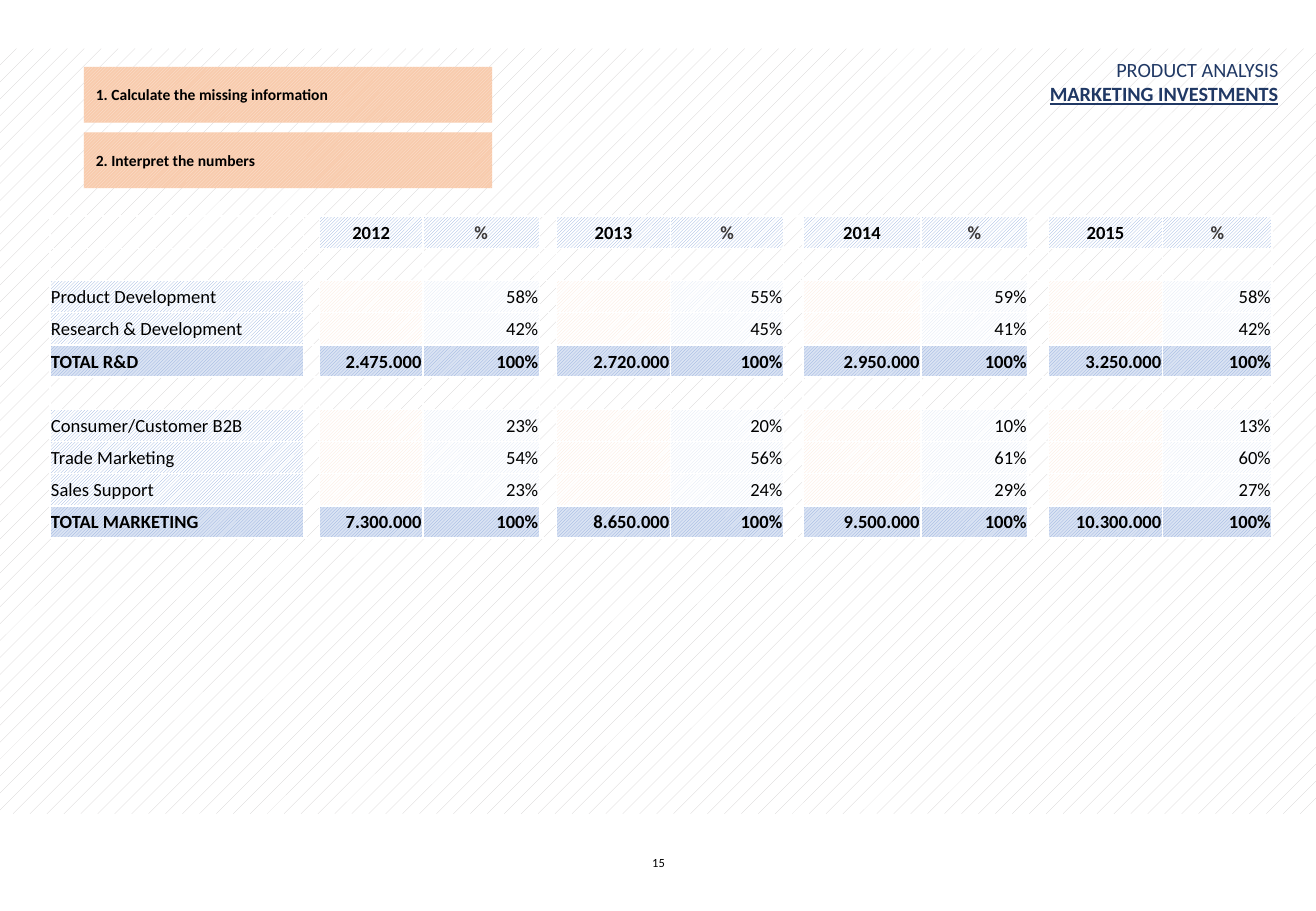
import pptx
import pptx.util
import pptx.dml.color
import pptx.enum.dml
import pptx.enum.shapes
import pptx.enum.text
import pptx.oxml
import pptx.oxml.ns
from dataclasses import dataclass

PX = 4572  # 200 px to the inch
ALIGN = pptx.enum.text.PP_ALIGN
MIDDLE = pptx.enum.text.MSO_ANCHOR.MIDDLE
PATTERN = pptx.enum.dml.MSO_PATTERN
LIGHT = PATTERN.LIGHT_UPWARD_DIAGONAL
DARK = PATTERN.DARK_UPWARD_DIAGONAL


@dataclass(frozen=True)
class Theme:
    font: str = "Calibri"
    ink: str = "000000"
    grey: str = "3B3838"
    navy: str = "203864"
    white: str = "FFFFFF"
    title: float = 12
    body: float = 11
    task: float = 9.2
    page: float = 7.4
    # Pattern, foreground, background
    back: tuple = (PATTERN.PERCENT_5, "D0CECE", "FFFFFF")
    box: tuple = (LIGHT, "FBE5D6", "F8CBAD")
    label: tuple = (LIGHT, "8FAADC", "FFFFFF")
    share: tuple = (LIGHT, "DAE3F3", "FFFFFF")
    gap: tuple = (DARK, "FBE5D6", "FFFFFF")
    total: tuple = (LIGHT, "8FAADC", "DAE3F3")


THEME = Theme()
YEARS = ["2012", "2013", "2014", "2015"]
# Label, amounts (None where they are to be found), shares
ROWS = {
    2: ("Product Development", None, ["58%", "55%", "59%", "58%"]),
    3: ("Research & Development", None, ["42%", "45%", "41%", "42%"]),
    4: ("TOTAL R&D", ["2.475.000", "2.720.000", "2.950.000", "3.250.000"],
        ["100%"] * 4),
    6: ("Consumer/Customer B2B", None, ["23%", "20%", "10%", "13%"]),
    7: ("Trade Marketing", None, ["54%", "56%", "61%", "60%"]),
    8: ("Sales Support", None, ["23%", "24%", "29%", "27%"]),
    9: ("TOTAL MARKETING",
        ["7.300.000", "8.650.000", "9.500.000", "10.300.000"], ["100%"] * 4),
}
COUNT = 10
WIDTHS = [418, 26, 170, 192, 28, 188, 186, 32, 194, 176, 34, 188, 180]
TASKS = ["1. Calculate the missing information", "2. Interpret the numbers"]


def tint(code):
    return pptx.dml.color.RGBColor.from_string(code)


def hatch(fill, style):
    fill.patterned()
    fill.pattern = style[0]
    fill.fore_color.rgb = tint(style[1])
    fill.back_color.rgb = tint(style[2])


def write(para, text, size, color=THEME.ink, bold=False, align=ALIGN.LEFT):
    para.text = text
    para.alignment = align
    para.font.name = THEME.font
    para.font.size = pptx.util.Pt(size)
    para.font.color.rgb = tint(color)
    para.font.bold = bold


def scale(*box):
    return [side * PX for side in box]


def block(slide, box, style):
    shape = slide.shapes.add_shape(
        pptx.enum.shapes.MSO_SHAPE.RECTANGLE, *scale(*box))
    shape.shadow.inherit = False
    shape.line.fill.background()
    hatch(shape.fill, style)
    return shape


def label(slide, box):
    frame = slide.shapes.add_textbox(*scale(*box)).text_frame
    frame.word_wrap = True
    return frame


# Hatched page and its number
def page(slide, wide, high):
    block(slide, (0, 80, wide, 1260), THEME.back)
    frame = label(slide, (840, high - 102, 488, 80))
    write(frame.paragraphs[0], "15", THEME.page, align=ALIGN.CENTER)


# Heading at top right
def head(slide, box):
    frame = label(slide, box)
    write(frame.paragraphs[0], "PRODUCT ANALYSIS", THEME.title, THEME.navy,
          align=ALIGN.RIGHT)
    para = frame.add_paragraph()
    write(para, "MARKETING INVESTMENTS", THEME.title, THEME.navy, True,
          ALIGN.RIGHT)
    para.font.underline = True


# Task boxes
def tasks(slide, left, top, wide, high, step):
    for i, text in enumerate(TASKS):
        shape = block(slide, (left, top + i * step, wide, high), THEME.box)
        shape.text_frame.vertical_anchor = MIDDLE
        write(shape.text_frame.paragraphs[0], text, THEME.task, bold=True)


def border(cell):
    props = cell._tc.get_or_add_tcPr()
    for side in ("lnL", "lnR", "lnT", "lnB"):
        props.append(pptx.oxml.parse_xml(
            f'<a:{side} {pptx.oxml.ns.nsdecls("a")} w="12700"><a:solidFill>'
            f'<a:srgbClr val="{THEME.white}"/></a:solidFill></a:{side}>'))


def blank(cell):
    border(cell)
    cell.fill.background()
    cell.vertical_anchor = MIDDLE
    cell.margin_left = cell.margin_right = cell.margin_top = 2 * PX
    cell.margin_bottom = 0
    # Keeps the height of an empty cell within its row
    end = cell.text_frame.paragraphs[0]._p.get_or_add_endParaRPr()
    end.set("sz", str(THEME.body * 100))


def put(cell, text, style, color=THEME.ink, bold=False, align=ALIGN.RIGHT):
    hatch(cell.fill, style)
    if text:
        write(cell.text_frame.paragraphs[0], text, THEME.body, color, bold,
              align)


# Table of investments by year
def grid(slide, left, top, high):
    table = slide.shapes.add_table(
        COUNT, len(WIDTHS),
        *scale(left, top, sum(WIDTHS), COUNT * high)).table
    table.first_row = table.horz_banding = False
    for col, wide in zip(table.columns, WIDTHS):
        col.width = wide * PX
    for row in table.rows:
        row.height = high * PX
    for cell in table.iter_cells():
        blank(cell)

    for i, year in enumerate(YEARS):
        col = 2 + 3 * i
        put(table.cell(0, col), year, THEME.label, bold=True,
            align=ALIGN.CENTER)
        put(table.cell(0, col + 1), "%", THEME.label, THEME.grey, True,
            ALIGN.CENTER)

    for row, (name, sums, parts) in ROWS.items():
        total = sums is not None
        put(table.cell(row, 0), name, THEME.total if total else THEME.label,
            bold=total, align=ALIGN.LEFT)
        for i, part in enumerate(parts):
            col = 2 + 3 * i
            put(table.cell(row, col), sums[i] if total else "",
                THEME.total if total else THEME.gap, bold=total)
            put(table.cell(row, col + 1), part,
                THEME.total if total else THEME.share, bold=total)


def main():
    deck = pptx.Presentation()
    wide, high = 2166, 1500
    deck.slide_width, deck.slide_height = scale(wide, high)
    slide = deck.slides.add_slide(deck.slide_layouts[6])
    page(slide, wide, high)
    grid(slide, 82, 356, 53)
    head(slide, (1500, 84, 624, 100))
    tasks(slide, 138, 110, 672, 92, 108)
    deck.save("out.pptx")


if __name__ == "__main__":
    main()
